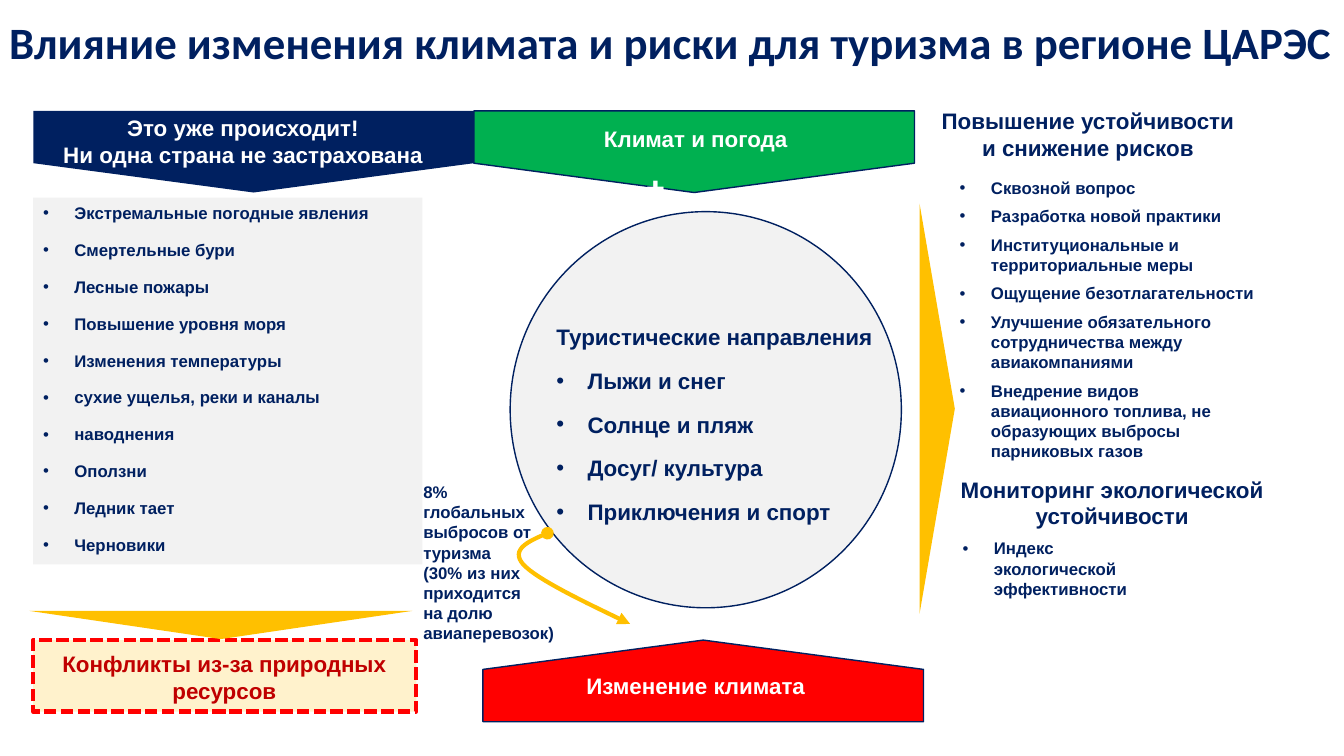
"""Build a slide on climate change and tourism risks in the region."""
from lxml import etree
from pptx import Presentation, util as u
from pptx.dml.color import RGBColor
from pptx.enum import dml, shapes, text
from pptx.oxml import ns


class Theme:
    navy = "002060"
    white = "FFFFFF"
    pale = "F2F2F2"
    gold = "FFC000"
    green = "00B050"
    red = "FF0000"
    dark = "C00000"
    cream = "FFF2CC"
    title, head, body = 32, 16, 12
    font, face = "Arial", "Calibri"


deck = Presentation()
deck.slide_width, deck.slide_height = u.Inches(13.33), u.Inches(7.5)
board = deck.slides.add_slide(deck.slide_layouts[6]).shapes
kind = shapes.MSO_SHAPE
left, center = text.PP_ALIGN.LEFT, text.PP_ALIGN.CENTER


def block(form, place, fill, edge=None, width=1, turn=0):
    shape = board.add_shape(form, *map(u.Inches, place))
    shape.shadow.inherit = False
    shape.rotation = turn
    shape.fill.solid()
    shape.fill.fore_color.rgb = RGBColor.from_string(fill)
    if edge:
        shape.line.color.rgb = RGBColor.from_string(edge)
        shape.line.width = u.Pt(width)
    else:
        shape.line.fill.background()
    return shape


def write(place, lines, size=Theme.body, color=Theme.navy, align=left,
          after=0, plain=0, box=None, font=Theme.font):
    box = box or board.add_textbox(*map(u.Inches, place))
    frame = box.text_frame
    frame.word_wrap = True
    frame.vertical_anchor = text.MSO_ANCHOR.TOP
    for i, line in enumerate(lines):
        para = frame.paragraphs[0] if i == 0 else frame.add_paragraph()
        if i >= plain:
            props = para._p.get_or_add_pPr()
            props.set("marL", str(u.Inches(0.31)))
            props.set("indent", str(u.Inches(-0.31)))
            mark = etree.SubElement(props, ns.qn("a:buFont"))
            mark.set("typeface", Theme.font)
            etree.SubElement(props, ns.qn("a:buChar")).set("char", "•")
        para.alignment = align
        para.space_after = u.Pt(after)
        for j, part in enumerate(line.split("\n")):
            if j:
                para.add_line_break()
            run = para.add_run()
            run.text = part
            run.font.name = font
            run.font.size = u.Pt(size)
            run.font.bold = True
            run.font.color.rgb = RGBColor.from_string(color)
    return frame


title = write((-0.3, -0.11, 13.91, 1.11),
              ["Влияние изменения климата и риски для туризма в регионе ЦАРЭС"],
              Theme.title, align=center, plain=1, font=Theme.face)
title.vertical_anchor = text.MSO_ANCHOR.MIDDLE
title.paragraphs[0].line_spacing = 0.9

area = (0.33, 1.96, 3.87, 3.64)
panel = block(kind.RECTANGLE, area, Theme.pale)
panel.width = u.Inches(3.86)
write(area, [
    "Экстремальные погодные явления",
    "Смертельные бури",
    "Лесные пожары",
    "Повышение уровня моря",
    "Изменения температуры",
    "сухие ущелья, реки и каналы",
    "наводнения",
    "Оползни",
    "Ледник тает",
    "Черновики",
], after=12, box=panel)

banners = [
    (2.11, -0.68, 90, Theme.navy, None, (0.47, 1.08, 3.88, 0.64),
     ["Это уже происходит!", "Ни одна страна не застрахована"]),
    (6.48, -0.68, 90, Theme.green, Theme.navy, (4.96, 1.19, 3.88, 0.37),
     ["Климат и погода"]),
    (6.57, 4.57, 270, Theme.red, Theme.navy, (4.96, 6.62, 3.88, 0.37),
     ["Изменение климата"]),
]
for x, y, turn, fill, edge, place, lines in banners:
    plate = block(kind.PENTAGON, (x, y, 0.81, 4.37), fill, edge, turn=turn)
    plate.adjustments[0] = 0.359
    write(place, lines, Theme.head, Theme.white, center, plain=len(lines))

clash = block(kind.RECTANGLE, (0.33, 6.35, 3.8, 0.71), Theme.cream, Theme.red, 3)
clash.line.dash_style = dml.MSO_LINE.SQUARE_DOT
write((0.33, 6.4, 3.79, 0.64), ["Конфликты из-за природных ресурсов"],
      Theme.head, Theme.dark, center, plain=1)
block(kind.ISOSCELES_TRIANGLE, (0.29, 6.06, 3.8, 0.28), Theme.gold, turn=180)

write((6.31, 1.69, 0.52, 0.37), ["✚"], Theme.head, Theme.white, plain=1)
block(kind.OVAL, (5.06, 2.1, 3.88, 3.93), Theme.pale, Theme.navy)
write((5.42, 3.16, 3.57, 2.39), [
    "Туристические направления",
    "Лыжи и снег",
    "Солнце и пляж",
    "Досуг/ культура",
    "Приключения и спорт",
], Theme.head, after=12, plain=1)
write((4.1, 4.73, 1.5, 1.72), [
    "8%\nглобальных выбросов от туризма\n"
    "(30% из них приходится\nна долю авиаперевозок)",
], plain=1)

bends = [
    ((5.43, 5.29), (5.24, 5.37), (5.06, 5.45), (5.19, 5.6)),
    ((5.19, 5.6), (5.33, 5.75), (5.79, 5.97), (6.25, 6.19)),
]
steps = 16
points = []
for bend in bends:
    for i in range(1, steps + 1):
        t = i / steps
        parts = ((1 - t) ** 3, 3 * t * (1 - t) ** 2, 3 * t * t * (1 - t), t ** 3)
        points.append(tuple(
            u.Inches(sum(w * p[axis] for w, p in zip(parts, bend)))
            for axis in (0, 1)))
start = map(u.Inches, bends[0][0])
path = board.build_freeform(*start)
path.add_line_segments(points, close=False)
curve = path.convert_to_shape()
curve.shadow.inherit = False
curve.fill.background()
curve.line.color.rgb = RGBColor.from_string(Theme.gold)
curve.line.width = u.Pt(3)
stroke = curve.line._get_or_add_ln()
etree.SubElement(stroke, ns.qn("a:round"))
for end, tip in (("a:headEnd", "oval"), ("a:tailEnd", "triangle")):
    etree.SubElement(stroke, ns.qn(end)).set("type", tip)

block(kind.ISOSCELES_TRIANGLE, (7.26, 3.88, 4.07, 0.35), Theme.gold, turn=90)
goals = [
    ((9.15, 1.01, 3.28, 0.91), "Повышение устойчивости и снижение рисков",
     (9.42, 1.71, 3.15, 2.95), [
         "Сквозной вопрос",
         "Разработка новой практики",
         "Институциональные и территориальные меры",
         "Ощущение безотлагательности",
         "Улучшение обязательного сотрудничества между авиакомпаниями",
         "Внедрение видов авиационного топлива, не образующих выбросы "
         "парниковых газов",
     ]),
    ((9.37, 4.67, 3.32, 0.91), "Мониторинг экологической устойчивости",
     (9.45, 5.29, 1.96, 0.71), ["Индекс экологической эффективности"]),
]
for top, head, place, lines in goals:
    write(top, [head], Theme.head, align=center, plain=1)
    write(place, lines, after=6)

deck.save("out.pptx")
